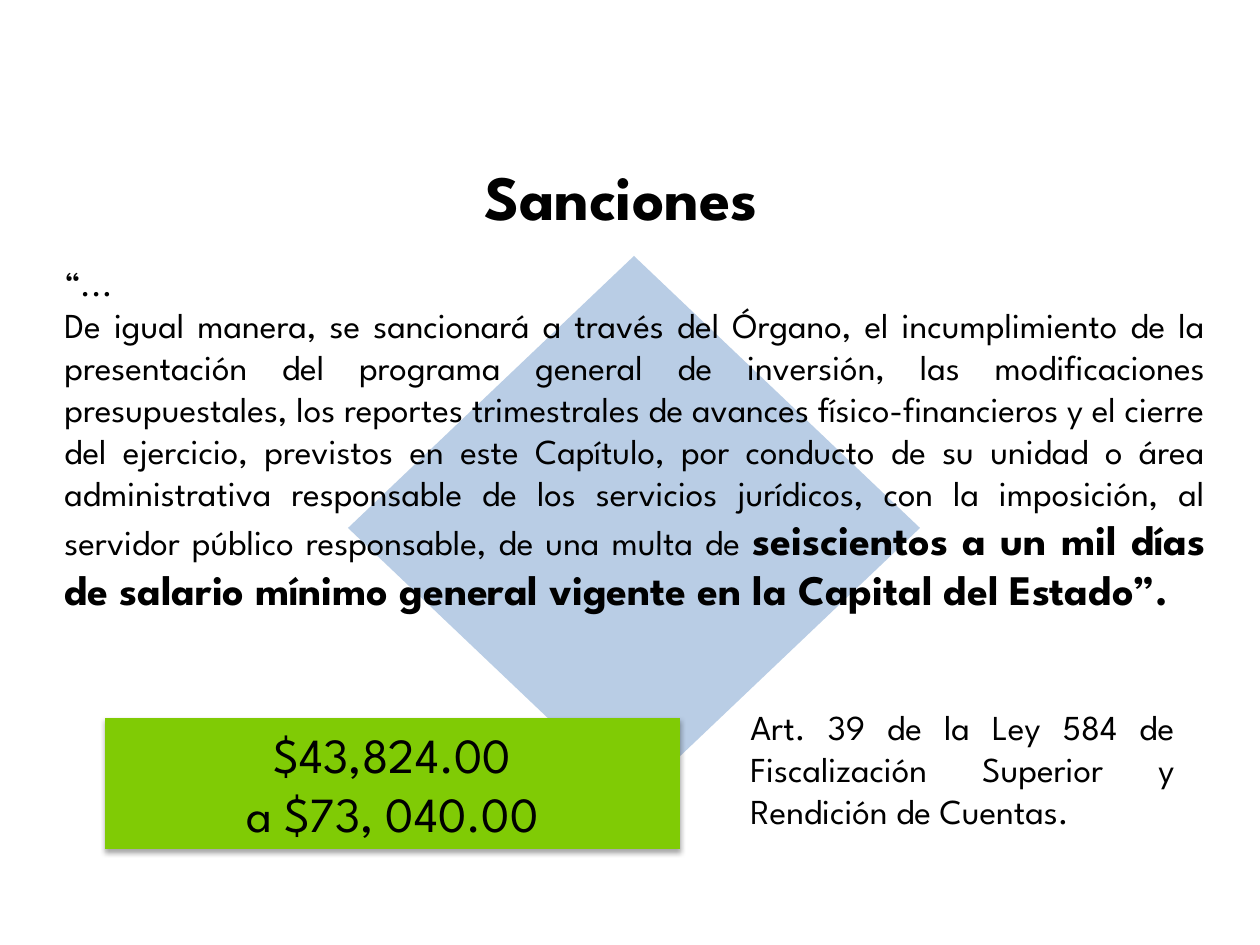
from lxml.etree import SubElement
from pptx import Presentation
from pptx.dml.color import RGBColor
from pptx.enum.shapes import MSO_SHAPE as Preset
from pptx.enum.text import MSO_ANCHOR as Anchor, MSO_AUTO_SIZE as AutoSize, PP_ALIGN as Align
from pptx.oxml.ns import qn
from pptx.util import Emu, Pt

EMU_PER_PX = 914400 / 126
FONT = "League Spartan"
COLORS = {"text": "000000", "diamond": "B9CDE5", "amount": "80CB05", "shadow": "000000"}

QUOTE_OPENING = "“..."
SANCTION = (
    "De igual manera, se sancionará a través del Órgano, el incumplimiento de la "
    "presentación del programa general de inversión, las modificaciones presupuestales, "
    "los reportes trimestrales de avances físico-financieros y el cierre del ejercicio, "
    "previstos en este Capítulo, por conducto de su unidad o área administrativa "
    "responsable de los servicios jurídicos, con la imposición, al servidor público "
    "responsable, de una multa de "
)
FINE = "seiscientos a un mil días de salario mínimo general vigente en la Capital del Estado”."
AMOUNTS = "$43,824.00\na $73, 040.00"
ARTICLE = "Art. 39 de la Ley 584 de Fiscalización Superior y Rendición de Cuentas."


def px(length):
    """Turn pixels into EMU."""
    return Emu(round(length * EMU_PER_PX))


def color(name):
    """Look up a named colour."""
    return RGBColor.from_string(COLORS[name])


def format_run(run, size, bold=False):
    """Give a run the slide's font, a size and a weight."""
    run.font.name = FONT
    run.font.size = Pt(size)
    run.font.bold = bold
    run.font.color.rgb = color("text")


def write(frame, text, size, align, bold=False):
    """Fill a text frame with evenly formatted paragraphs."""
    frame.text = text
    frame.word_wrap = True
    for paragraph in frame.paragraphs:
        paragraph.alignment = align
        for run in paragraph.runs:
            format_run(run, size, bold)


def add_title(slide, text, left, top, width, height):
    """Place and fill the title placeholder."""
    title = slide.shapes.title
    title.left, title.top, title.width, title.height = map(px, (left, top, width, height))
    write(title.text_frame, text, 36, Align.CENTER, bold=True)
    title.text_frame.auto_size = AutoSize.NONE
    title.text_frame.vertical_anchor = Anchor.MIDDLE


def add_justified_text(slide, text, *box):
    """Add a justified text box and return its frame."""
    frame = slide.shapes.add_textbox(*map(px, box)).text_frame
    write(frame, text, 20, Align.JUSTIFY)
    frame.auto_size = AutoSize.SHAPE_TO_FIT_TEXT
    return frame


def add_filled_shape(slide, preset, fill, *box):
    """Add a borderless shape without a shadow."""
    shape = slide.shapes.add_shape(preset, *map(px, box))
    shape.shadow.inherit = False
    shape.fill.solid()
    shape.fill.fore_color.rgb = color(fill)
    shape.line.fill.background()
    return shape


def cast_shadow(shape):
    """Give a shape a soft shadow below it."""
    effects = shape.element.spPr.find(qn("a:effectLst"))
    shadow = SubElement(effects, qn("a:outerShdw"), blurRad=str(Pt(3.1)), dist=str(Pt(1.8)),
                        dir="5400000", rotWithShape="0")
    tint = SubElement(shadow, qn("a:srgbClr"), val=COLORS["shadow"])
    SubElement(tint, qn("a:alpha"), val="35000")


def main():
    """Build and save the sanctions slide."""
    deck = Presentation()
    deck.slide_width, deck.slide_height = px(1260), px(945)
    slide = deck.slides.add_slide(deck.slide_layouts[5])

    add_filled_shape(slide, Preset.DIAMOND, "diamond", 348, 256, 572, 544)
    add_title(slide, "Sanciones", 54, 116, 1134, 158)

    sanction = add_justified_text(slide, f"{QUOTE_OPENING}\n{SANCTION}", 52, 255, 1166, 369)
    fine = sanction.paragraphs[-1].add_run()
    fine.text = FINE
    format_run(fine, 24, bold=True)

    amount = add_filled_shape(slide, Preset.RECTANGLE, "amount", 105, 718, 575, 131)
    cast_shadow(amount)
    write(amount.text_frame, AMOUNTS, 28, Align.CENTER)
    amount.text_frame.vertical_anchor = Anchor.TOP
    amount.text_frame.auto_size = AutoSize.SHAPE_TO_FIT_TEXT

    add_justified_text(slide, ARTICLE, 738, 699, 449, 140)
    deck.save("out.pptx")


if __name__ == "__main__":
    main()
